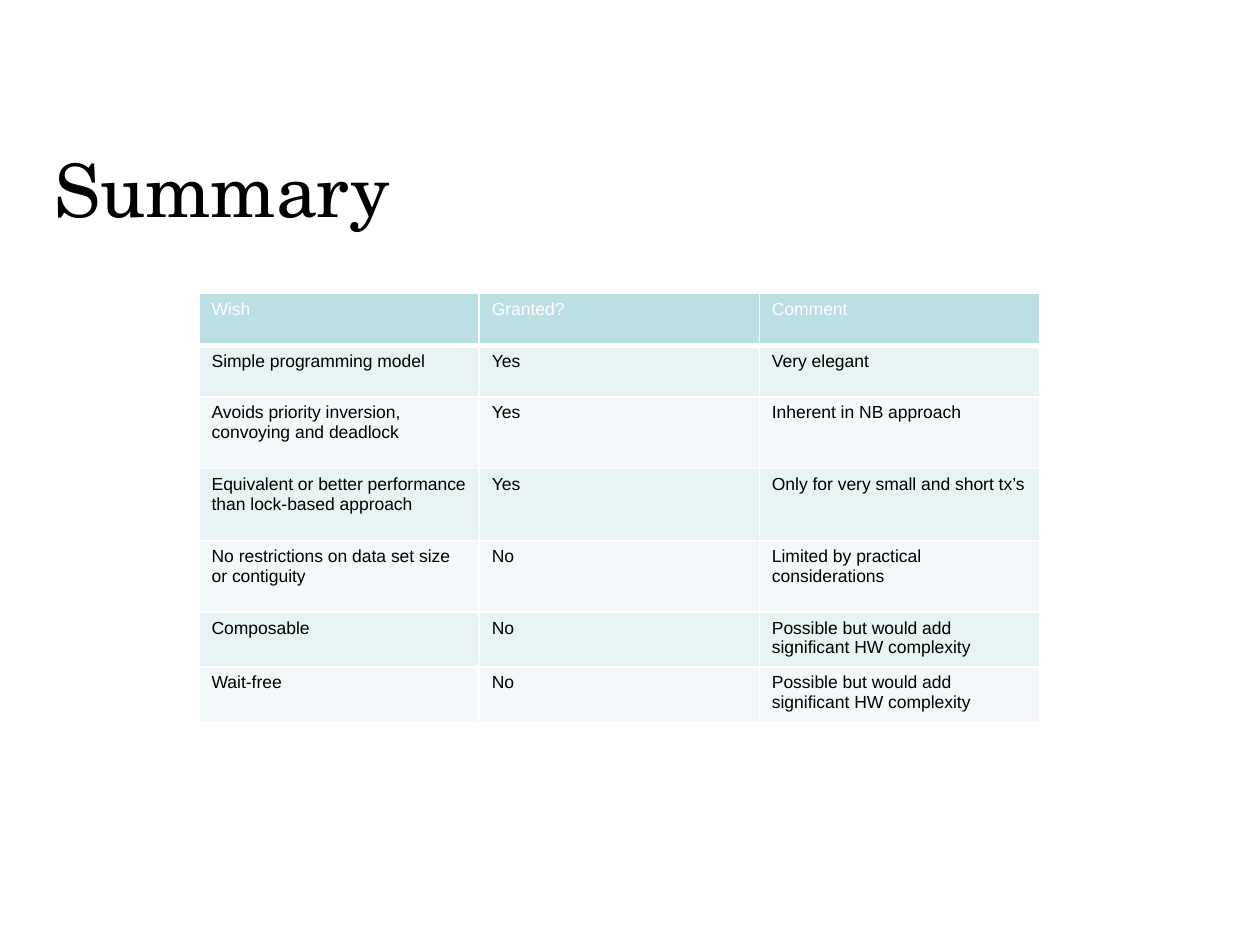
from lxml.etree import SubElement
from pptx import Presentation
from pptx.dml.color import RGBColor as Color
from pptx.enum.text import MSO_ANCHOR as Anchor, MSO_AUTO_SIZE as AutoSize, PP_ALIGN as Align
from pptx.oxml.ns import qn
from pptx.util import Inches, Pt

COLORS = {
    "text": "000000",
    "header text": "FFFFFF",
    "border": "FFFFFF",
    "header": "BBE0E3",
    "odd row": "E7F3F4",
    "even row": "F3F9FA",
}

WISHES = [
    ("Wish", "Granted?", "Comment"),
    ("Simple programming model", "Yes", "Very elegant"),
    ("Avoids priority inversion, convoying and deadlock", "Yes", "Inherent in NB approach"),
    ("Equivalent or better performance than lock-based approach", "Yes",
     "Only for very small and short tx’s"),
    ("No restrictions on data set size or contiguity", "No",
     "Limited by practical considerations"),
    ("Composable", "No", "Possible but would add significant HW complexity"),
    ("Wait-free", "No", "Possible but would add significant HW complexity"),
]
SHORT, TALL = 0.41, 0.57
ROW_HEIGHTS = [SHORT, SHORT, TALL, TALL, TALL, SHORT, SHORT]


def write(frame, text, *, font, size, color, spacing=None):
    """Put one formatted paragraph into a text frame."""
    para = frame.paragraphs[0]
    para.alignment = Align.LEFT
    if spacing:
        para.line_spacing = spacing
    span = para.add_run()
    span.text = text
    span.font.name = font
    span.font.size = Pt(size)
    span.font.color.rgb = Color.from_string(COLORS[color])


class SlideBuilder:
    """Holds the style and the current slide."""

    title_font, title_size = "TeX Gyre Schola", 42
    body_font, body_size = "Arial", 10

    def __init__(self, deck):
        self.page = deck.slides.add_slide(deck.slide_layouts[5])

    def title(self, text, left, top, width, height):
        box = self.page.shapes.title
        box.left, box.top, box.width, box.height = map(Inches, (left, top, width, height))
        frame = box.text_frame
        frame.word_wrap = True
        frame.vertical_anchor = Anchor.MIDDLE
        frame.auto_size = AutoSize.SHAPE_TO_FIT_TEXT
        write(frame, text, font=self.title_font, size=self.title_size,
              color="text", spacing=0.9)

    def table(self, rows, heights, left, top, width):
        columns = len(rows[0])
        table = self.page.shapes.add_table(
            len(rows), columns, Inches(left), Inches(top),
            Inches(width), Inches(sum(heights))).table
        for column in table.columns:
            column.width = Inches(width / columns)
        for number, (texts, height) in enumerate(zip(rows, heights)):
            table.rows[number].height = Inches(height)
            for index, text in enumerate(texts):
                self.cell(table.cell(number, index), text, number)

    def cell(self, cell, text, number):
        is_header = number == 0
        self.borders(cell, bottom=3 if is_header else 1)
        fill = "header" if is_header else "odd row" if number % 2 else "even row"
        cell.fill.solid()
        cell.fill.fore_color.rgb = Color.from_string(COLORS[fill])
        write(cell.text_frame, text, font=self.body_font, size=self.body_size,
              color="header text" if is_header else "text")

    def borders(self, cell, bottom):
        properties = cell._tc.get_or_add_tcPr()
        for side, points in (("L", 1), ("R", 1), ("T", 1), ("B", bottom)):
            line = SubElement(properties, qn(f"a:ln{side}"), w=str(Pt(points)))
            fill = SubElement(line, qn("a:solidFill"))
            SubElement(fill, qn("a:srgbClr"), val=COLORS["border"])


def main():
    deck = Presentation()
    deck.slide_width, deck.slide_height = Inches(10), Inches(7.5)
    builder = SlideBuilder(deck)

    # Heading
    builder.title("Summary", 0.33, 1.23, 9.67, 0.61)

    # Wishes and whether they were granted
    builder.table(WISHES, ROW_HEIGHTS, 1.58, 2.33, 6.67)

    deck.save("out.pptx")


if __name__ == "__main__":
    main()
